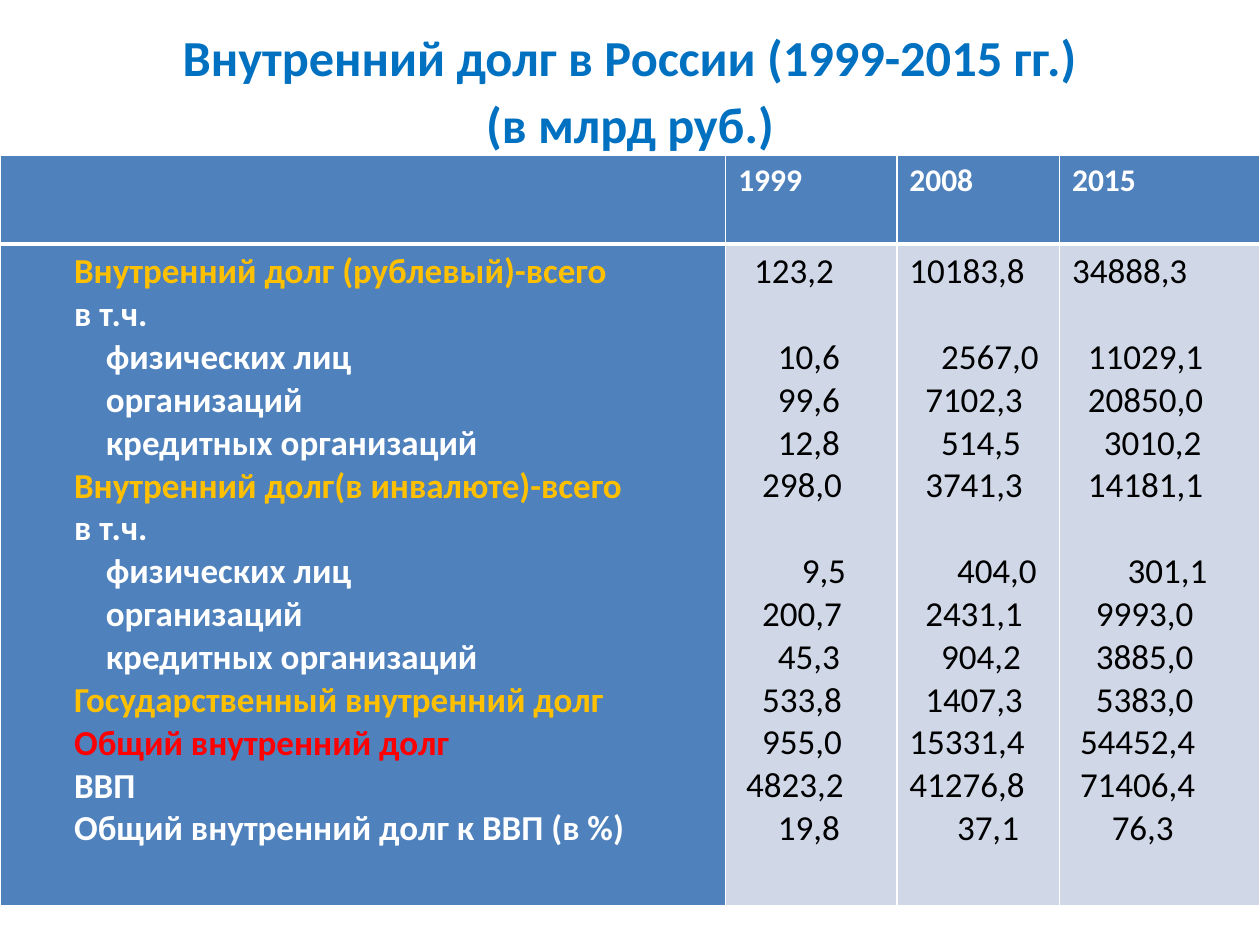
from dataclasses import dataclass

from lxml import etree
from pptx import Presentation
from pptx.dml.color import RGBColor
from pptx.enum.text import MSO_ANCHOR, MSO_AUTO_SIZE, PP_ALIGN
from pptx.oxml.ns import qn
from pptx.util import Cm, Pt

CENTER = PP_ALIGN.CENTER
JUSTIFY = PP_ALIGN.JUSTIFY
MIDDLE = MSO_ANCHOR.MIDDLE
NO_AUTOFIT = MSO_AUTO_SIZE.NONE
TITLE_ONLY = 5


@dataclass(frozen=True)
class Theme:
    font: str = "Calibri"
    title: str = "0070C0"
    header_fill: str = "4F81BD"
    body_fill: str = "D0D8E8"
    light: str = "FFFFFF"
    dark: str = "000000"
    accent: str = "FFC000"
    total: str = "FF0000"
    title_size: float = 28.8
    header_size: float = 18
    body_size: float = 20
    line_height: float = 24.4
    border: float = 1
    header_border: float = 3


THEME = Theme()
SLIDE_WIDTH, SLIDE_HEIGHT = 25.4, 19.05
TITLE_HEIGHT = 3.12
COLUMN_WIDTHS = (14.63, 3.45, 3.28, 4.04)
ROW_HEIGHTS = (1.8, 13.34)
LABEL_INDENT = 1.24
SUBITEM_INDENT = 0.64
VALUE_STEP = 0.16

TITLE = "Внутренний долг в России (1999-2015 гг.)\v(в млрд руб.)"
YEARS = ("1999", "2008", "2015")
SUBITEMS = [
    ("в т.ч.", THEME.light, 0),
    ("физических лиц", THEME.light, 1),
    ("организаций", THEME.light, 1),
    ("кредитных организаций", THEME.light, 1),
]
LABELS = [
    ("Внутренний долг (рублевый)-всего", THEME.accent, 0),
    *SUBITEMS,
    ("Внутренний долг(в инвалюте)-всего", THEME.accent, 0),
    *SUBITEMS,
    ("Государственный внутренний долг", THEME.accent, 0),
    ("Общий внутренний долг", THEME.total, 0),
    ("ВВП", THEME.light, 0),
    ("Общий внутренний долг к ВВП (в %)", THEME.light, 0),
]
VALUES = [
    [("123,2", 2), None, ("10,6", 5), ("99,6", 5), ("12,8", 5), ("298,0", 3), None,
     ("9,5", 8), ("200,7", 3), ("45,3", 5), ("533,8", 3), ("955,0", 3),
     ("4823,2", 1), ("19,8", 5)],
    [("10183,8", 0), None, ("2567,0", 4), ("7102,3", 2), ("514,5", 4), ("3741,3", 2), None,
     ("404,0", 6), ("2431,1", 2), ("904,2", 4), ("1407,3", 2), ("15331,4", 0),
     ("41276,8", 0), ("37,1", 6)],
    [("34888,3", 0), None, ("11029,1", 2), ("20850,0", 2), ("3010,2", 4), ("14181,1", 2), None,
     ("301,1", 7), ("9993,0", 3), ("3885,0", 3), ("5383,0", 3), ("54452,4", 1),
     ("71406,4", 1), ("76,3", 5)],
]


def format_paragraph(paragraph, text, size, color, bold, alignment=JUSTIFY, indent=0):
    paragraph.text = text
    paragraph.alignment = alignment
    font = paragraph.font
    font.name = THEME.font
    font.size = Pt(size)
    font.bold = bold
    font.color.rgb = RGBColor.from_string(color)
    properties = paragraph._p.get_or_add_pPr()
    properties.set("marL", "0")
    properties.set("indent", str(Cm(indent)))


def next_paragraph(text_frame, index):
    return text_frame.add_paragraph() if index else text_frame.paragraphs[0]


def style_cell(cell, fill, top, bottom):
    properties = cell._tc.get_or_add_tcPr()
    sides = (("L", THEME.border), ("R", THEME.border), ("T", top), ("B", bottom))
    for side, width in sides:
        line = etree.SubElement(properties, qn(f"a:ln{side}"), w=str(Pt(width)))
        solid = etree.SubElement(line, qn("a:solidFill"))
        etree.SubElement(solid, qn("a:srgbClr"), val=THEME.light)
    cell.fill.solid()
    cell.fill.fore_color.rgb = RGBColor.from_string(fill)


def fill_labels(cell):
    for index, (text, color, level) in enumerate(LABELS):
        paragraph = next_paragraph(cell.text_frame, index)
        indent = LABEL_INDENT + level * SUBITEM_INDENT
        format_paragraph(paragraph, text, THEME.body_size, color, True, indent=indent)


def fill_values(cell, values):
    skipped_lines = 0
    for index, value in enumerate(values):
        if value is None:
            skipped_lines += 1
            continue
        text, steps = value
        paragraph = next_paragraph(cell.text_frame, index)
        format_paragraph(paragraph, text, THEME.body_size, THEME.dark, False,
                         indent=steps * VALUE_STEP)
        if skipped_lines:
            paragraph.space_before = Pt(skipped_lines * THEME.line_height)
            skipped_lines = 0


def add_title(slide, left, top, width, height):
    title = slide.shapes.title
    title.left, title.top, title.width, title.height = map(Cm, (left, top, width, height))
    text_frame = title.text_frame
    text_frame.auto_size = NO_AUTOFIT
    text_frame.vertical_anchor = MIDDLE
    text_frame.margin_top = Cm(0.5)
    paragraph = text_frame.paragraphs[0]
    format_paragraph(paragraph, TITLE, THEME.title_size, THEME.title, True, CENTER)
    paragraph.line_spacing = Pt(38)


def add_debt_table(slide, left, top, width, height):
    frame = slide.shapes.add_table(len(ROW_HEIGHTS), len(COLUMN_WIDTHS),
                                   *map(Cm, (left, top, width, height)))
    table = frame.table
    for column, share in zip(table.columns, COLUMN_WIDTHS):
        column.width = Cm(width * share / sum(COLUMN_WIDTHS))
    for row, share in zip(table.rows, ROW_HEIGHTS):
        row.height = Cm(height * share / sum(ROW_HEIGHTS))
    for index in range(len(COLUMN_WIDTHS)):
        style_cell(table.cell(0, index), THEME.header_fill, THEME.border, THEME.header_border)
        body_fill = THEME.body_fill if index else THEME.header_fill
        style_cell(table.cell(1, index), body_fill, THEME.header_border, THEME.border)
    fill_labels(table.cell(1, 0))
    for index, (year, values) in enumerate(zip(YEARS, VALUES), start=1):
        header = table.cell(0, index).text_frame.paragraphs[0]
        format_paragraph(header, year, THEME.header_size, THEME.light, True)
        fill_values(table.cell(1, index), values)


def main():
    presentation = Presentation()
    presentation.slide_width = Cm(SLIDE_WIDTH)
    presentation.slide_height = Cm(SLIDE_HEIGHT)
    slide = presentation.slides.add_slide(presentation.slide_layouts[TITLE_ONLY])
    add_title(slide, 0, 0, SLIDE_WIDTH, TITLE_HEIGHT)
    add_debt_table(slide, 0, TITLE_HEIGHT, SLIDE_WIDTH, sum(ROW_HEIGHTS))
    presentation.save("out.pptx")


if __name__ == "__main__":
    main()
